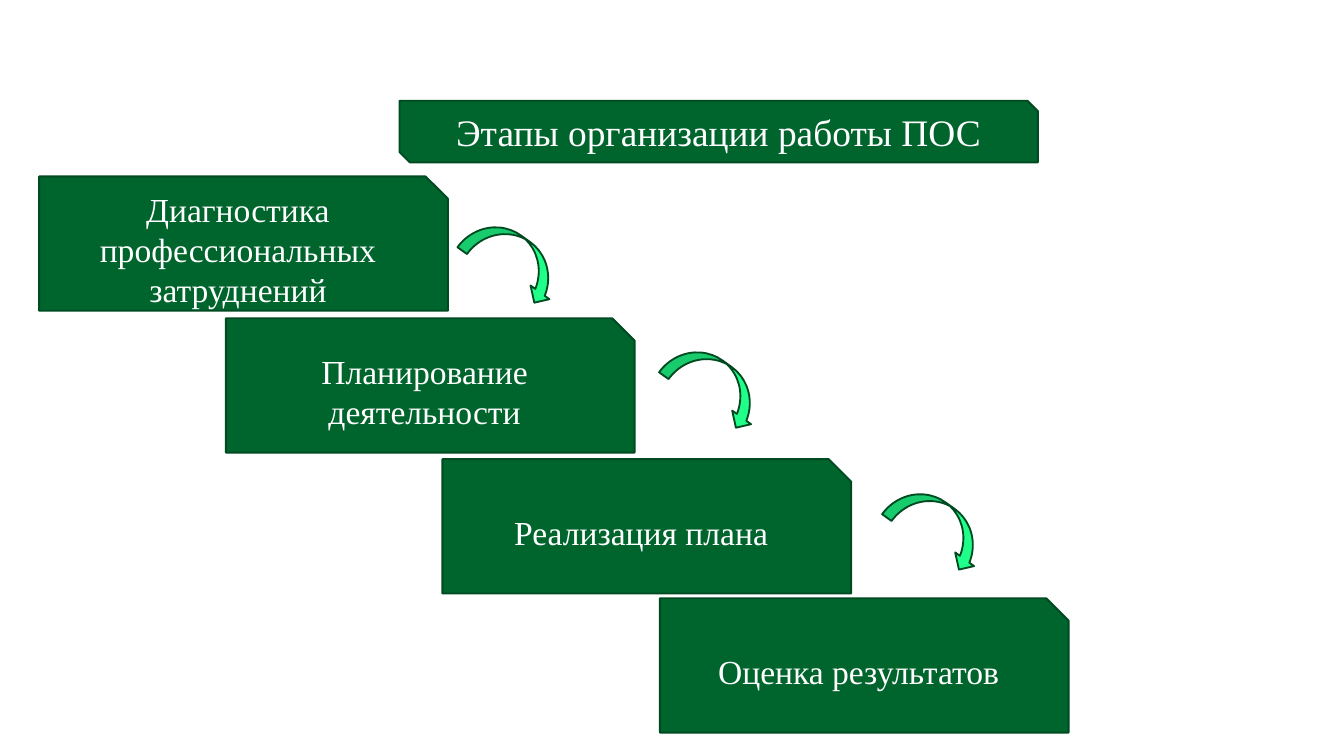
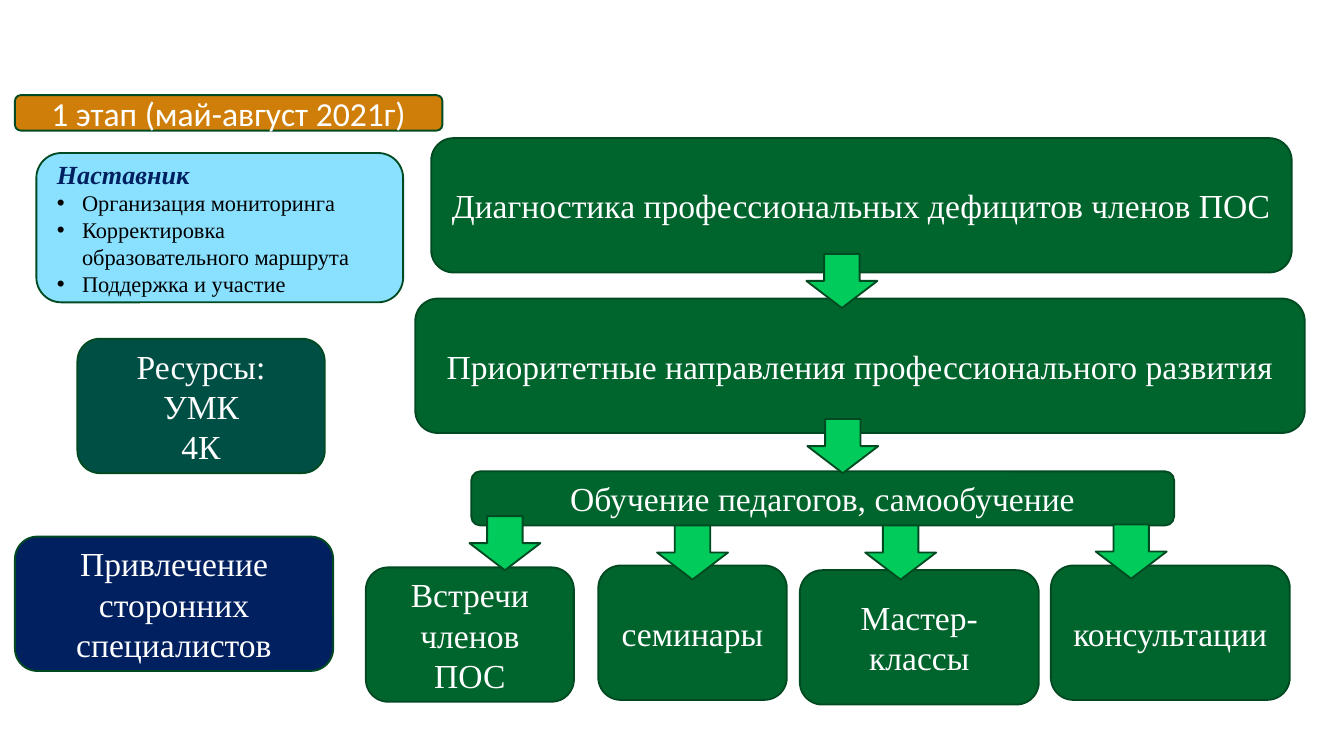
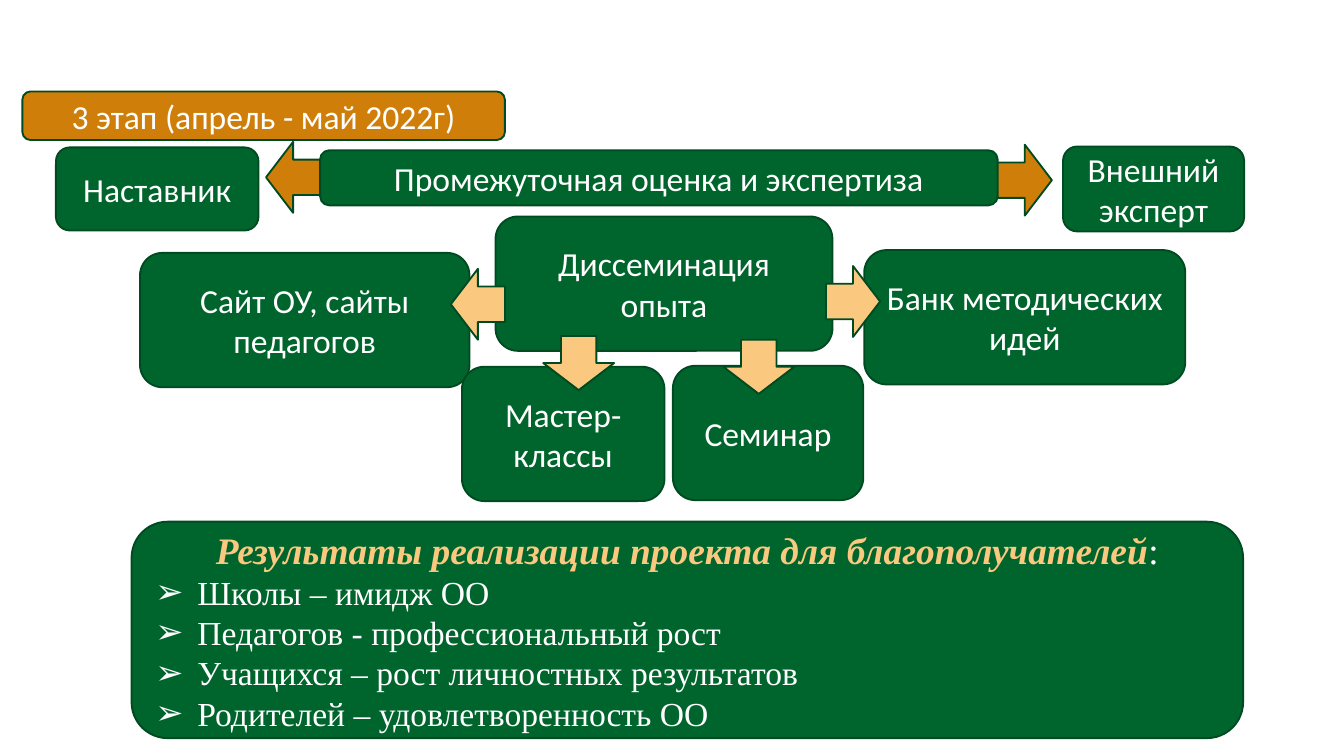
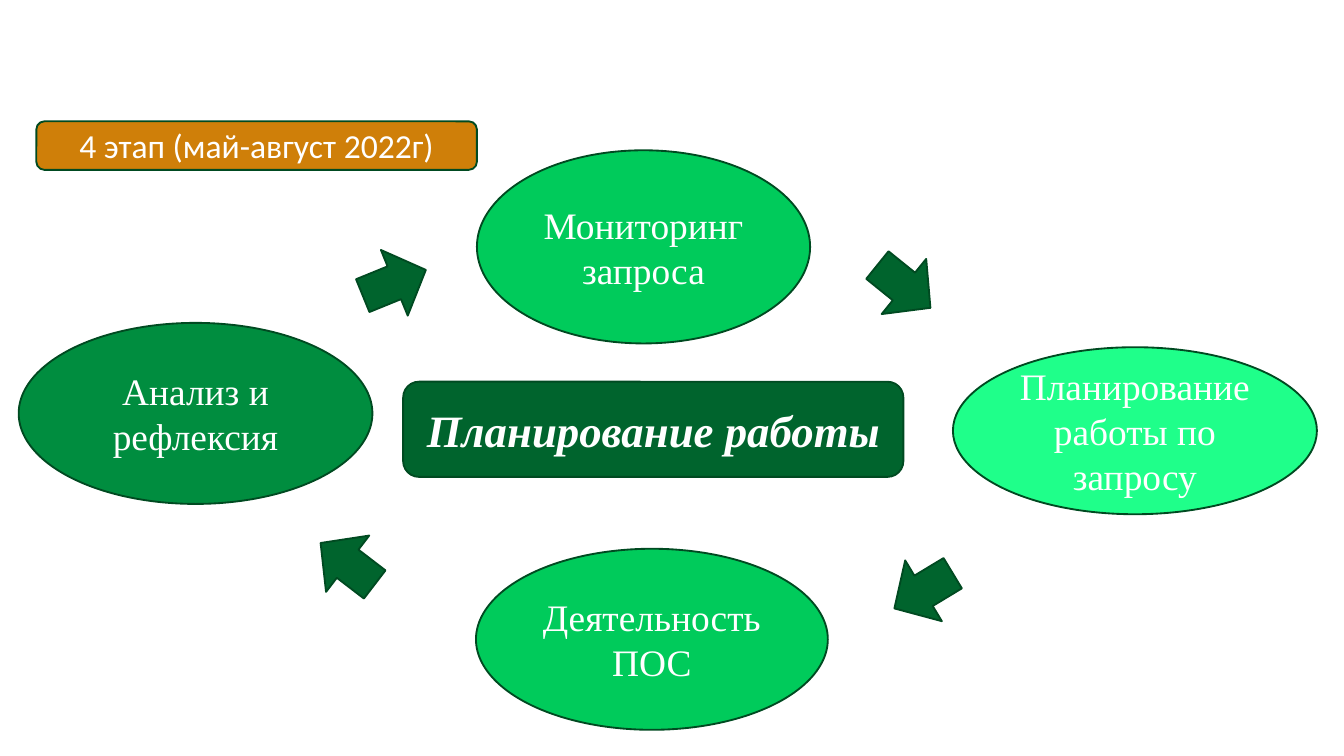
from lxml.etree import SubElement
from pptx import Presentation
from pptx.dml.color import RGBColor
from pptx.enum.shapes import MSO_SHAPE as Kind
from pptx.enum.text import MSO_ANCHOR, PP_ALIGN
from pptx.oxml.ns import qn
from pptx.util import Pt

# Shared colours
WHITE = RGBColor(0xFF, 0xFF, 0xFF)
BLACK = RGBColor(0x00, 0x00, 0x00)
EDGE = RGBColor(0x00, 0x4A, 0x21)
DARK = RGBColor(0x00, 0x64, 0x2D)
MID = RGBColor(0x00, 0x8D, 0x3F)
GREEN = RGBColor(0x00, 0xCB, 0x5B)
LIGHT = RGBColor(0x1F, 0xFF, 0x8A)
TEAL = RGBColor(0x00, 0x4F, 0x45)
NAVY = RGBColor(0x00, 0x20, 0x60)
SKY = RGBColor(0x8A, 0xE1, 0xFF)
OCHRE = RGBColor(0xCF, 0x7F, 0x09)
SAND = RGBColor(0xFA, 0xC8, 0x7F)

# Shared fonts
SERIF = "Times New Roman"
SANS = "Calibri"

LEFT, RIGHT = 90, 270  # turns of a down arrow


def style(font, size, color=WHITE, name=SERIF, strong=False):
    font.size, font.name = Pt(size), name
    font.bold = font.italic = strong
    font.color.rgb = color


def bullet(par, mark, face, indent, color):
    props = par._p.get_or_add_pPr()
    props.set("marL", str(Pt(indent)))
    props.set("indent", str(-Pt(indent)))
    tint = SubElement(props, qn("a:buClr"))
    SubElement(tint, qn("a:srgbClr"), val=str(color))
    SubElement(props, qn("a:buFont"), typeface=face)
    SubElement(props, qn("a:buChar"), char=mark)


def listing(frame, items, size, color, mark, face, indent):
    for item in items:
        par = frame.add_paragraph()
        par.text = item
        par.alignment = PP_ALIGN.LEFT
        bullet(par, mark, face, indent, color)
        style(par.font, size, color)


class Area:
    """A region of a slide; its parts are placed from its top left corner."""

    def __init__(self, slide, left, top):
        self.slide, self.left, self.top = slide, left, top

    def shape(self, kind, box, fill, turn=0):
        x, y, w, h = box
        part = self.slide.shapes.add_shape(
            kind, Pt(self.left + x), Pt(self.top + y), Pt(w), Pt(h))
        part.shadow.inherit = False
        part.fill.solid()
        part.fill.fore_color.rgb = fill
        part.line.color.rgb = EDGE
        part.line.width = Pt(1)
        part.rotation = turn
        frame = part.text_frame
        frame.word_wrap = True
        frame.vertical_anchor = MSO_ANCHOR.MIDDLE
        return frame

    def label(self, text, box, fill=DARK, kind=Kind.ROUNDED_RECTANGLE,
              size=18, name=SERIF, strong=False):
        frame = self.shape(kind, box, fill)
        frame.text = text
        for par in frame.paragraphs:
            par.alignment = PP_ALIGN.CENTER
            style(par.font, size, WHITE, name, strong)

    def arrow(self, x, y, fill, turn=0):
        self.shape(Kind.DOWN_ARROW, (x, y, 38, 29), fill, turn)


def tag(slide, text, left, top, width, height=26):
    Area(slide, left, top).label(text, (0, 0, width, height), OCHRE, name=SANS)


# Slide 1: descending steps
def stairs(slide, left, top):
    area = Area(slide, left, top)
    area.label("Этапы организации работы ПОС", (193, 0, 342, 33),
               kind=Kind.SNIP_2_DIAG_RECTANGLE, size=20)
    steps = (("Диагностика профессиональных затруднений", 0, 40.5),
             ("Планирование деятельности", 100, 116.5),
             ("Реализация плана", 216, 192),
             ("Оценка результатов", 332.5, 266.5))
    for text, x, y in steps:
        area.label(text, (x, y, 219, 72), kind=Kind.SNIP_1_RECTANGLE)
    for x, y in ((226, 72.5), (334, 139.5), (453.5, 215.5)):
        area.shape(Kind.CURVED_DOWN_ARROW, (x, y, 57, 25), LIGHT, 35.8)


# Slide 2: left column
def support(slide, left, top):
    area = Area(slide, left, top)
    frame = area.shape(Kind.ROUNDED_RECTANGLE, (11.5, 0, 196.5, 80), SKY)
    head = frame.paragraphs[0]
    head.text = "Наставник"
    head.alignment = PP_ALIGN.LEFT
    style(head.font, 14, NAVY, strong=True)
    listing(frame, ("Организация мониторинга",
                    "Корректировка образовательного маршрута",
                    "Поддержка и участие"), 12, BLACK, "•", "Arial", 13.5)
    area.label("Ресурсы:\nУМК\n4К", (33.5, 99.5, 132.5, 72), TEAL)
    area.label("Привлечение сторонних специалистов",
               (0, 205.5, 170.5, 72), NAVY)


# Slide 2: flow of work
def flow(slide, left, top):
    area = Area(slide, left, top)
    for text, box in (
            ("Диагностика профессиональных дефицитов членов ПОС",
             (35, 0, 461, 72)),
            ("Приоритетные направления профессионального развития",
             (26.5, 86, 476.5, 72)),
            ("Обучение педагогов, самообучение", (56.5, 178.5, 376.5, 29)),
            ("Встречи членов ПОС", (0, 230, 111.5, 72)),
            ("семинары", (124.5, 229, 101, 72)),
            ("Мастер-классы", (232.5, 231.5, 128, 72)),
            ("консультации", (367, 229, 128, 72))):
        area.label(text, box)
    for x, y in ((236, 62), (236.5, 150.5), (156, 207.5),
                 (267.5, 207.5), (391, 207), (55.5, 202.5)):
        area.arrow(x, y, GREEN)


# Slide 3: review row
def review(slide, left, top):
    area = Area(slide, left, top)
    for text, box in (
            ("Промежуточная оценка и экспертиза", (141.5, 2, 363, 29.5)),
            ("Внешний эксперт", (539.5, 0, 97, 45.5)),
            ("Наставник", (0, 0.5, 108.5, 44.5))):
        area.label(text, box, name=SANS)
    area.arrow(500, 3.5, OCHRE, RIGHT)
    area.arrow(108, 2, OCHRE, LEFT)


# Slide 3: ways to share experience
def sharing(slide, left, top):
    area = Area(slide, left, top)
    for text, x, y, width in (
            ("Сайт ОУ, сайты педагогов", 0, 19.5, 176.5),
            ("Диссеминация опыта", 190.5, 0, 180.5),
            ("Банк методических идей", 388, 18, 172),
            ("Мастер-классы", 172.5, 80.5, 108.5),
            ("Семинар", 285.5, 80, 102)):
        area.label(text, (x, y, width, 72), name=SANS)
    for x, y, turn in ((216, 64, 0), (312.5, 66, 0),
                       (162, 32.5, LEFT), (363, 31, RIGHT)):
        area.arrow(x, y, SAND, turn)


# Slide 3: results panel
def results(slide, left, top):
    area = Area(slide, left, top)
    frame = area.shape(Kind.ROUNDED_RECTANGLE, (0, 0, 595.5, 116), DARK)
    head = frame.paragraphs[0]
    head.alignment = PP_ALIGN.CENTER
    for text, color, strong in (
            ("Результаты реализации проекта для благополучателей", SAND, True),
            (":", WHITE, False)):
        run = head.add_run()
        run.text = text
        style(run.font, 20, color, strong=strong)
    listing(frame, ("Школы – имидж ОО",
                    "Педагогов - профессиональный рост",
                    "Учащихся – рост личностных результатов",
                    "Родителей – удовлетворенность ОО"),
            18, WHITE, "➢", "Arial", 22.5)


# Slide 4: cycle of planning
def cycle(slide, left, top):
    area = Area(slide, left, top)
    area.label("Планирование работы", (206, 124, 268, 51),
               size=24, strong=True)
    for text, box, fill in (
            ("Мониторинг запроса", (245.5, 0, 178.5, 103.5), GREEN),
            ("Анализ и рефлексия", (0, 92.5, 189.5, 97), MID),
            ("Планирование работы по запросу",
             (500.5, 105.5, 195, 89.5), LIGHT),
            ("Деятельность ПОС", (245, 213.5, 188.5, 97), GREEN)):
        area.label(text, box, fill, Kind.OVAL, 20)
    for x, y, turn in ((183, 52, 337.8), (158, 202.5, 217.5),
                       (466.5, 217, 148.9), (456, 54, 38.9)):
        area.shape(Kind.RIGHT_ARROW, (x, y, 36.5, 38), DARK, turn)


def main():
    deck = Presentation()
    deck.slide_width, deck.slide_height = Pt(720), Pt(405)
    blank = deck.slide_layouts[6]
    first, second, third, fourth = (
        deck.slides.add_slide(blank) for _ in range(4))

    stairs(first, 21, 54)

    flow(second, 196, 74)
    support(second, 8, 82)
    tag(second, "1 этап (май-август 2021г)", 8, 51, 229, 19)

    tag(third, "3 этап (апрель - май 2022г)", 12, 49, 258.5)
    review(third, 30, 78.5)
    sharing(third, 75, 116)
    results(third, 70.5, 279.5)

    cycle(fourth, 10, 80.5)
    tag(fourth, "4 этап (май-август 2022г)", 19.5, 65, 236)

    deck.save("out.pptx")


if __name__ == "__main__":
    main()
